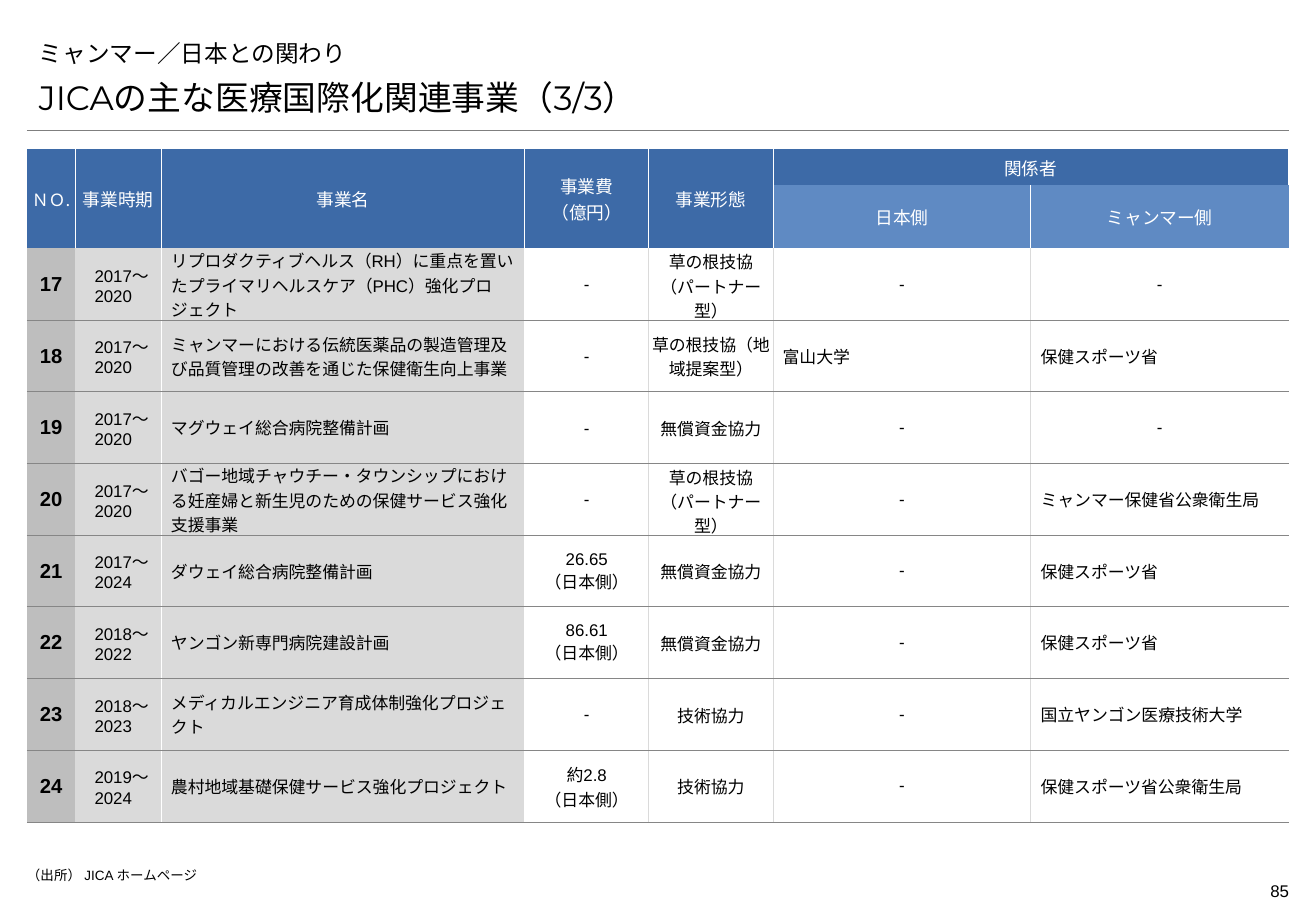
from lxml import etree
from pptx import Presentation
from pptx.dml.color import RGBColor
from pptx.enum.shapes import MSO_CONNECTOR
from pptx.enum.text import MSO_ANCHOR, PP_ALIGN
from pptx.oxml.ns import qn
from pptx.util import Pt

LEFT, CENTER, RIGHT = PP_ALIGN.LEFT, PP_ALIGN.CENTER, PP_ALIGN.RIGHT
TOP, MIDDLE, BOTTOM = MSO_ANCHOR.TOP, MSO_ANCHOR.MIDDLE, MSO_ANCHOR.BOTTOM
STRAIGHT = MSO_CONNECTOR.STRAIGHT

# Content
SUBTITLE = "ミャンマー／日本との関わり"
TITLE = "JICAの主な医療国際化関連事業（3/3）"
SOURCE = "（出所） JICA ホームページ"
PAGE_NUMBER = "85"
HEADERS = ["ＮＯ.", "事業時期", "事業名", "事業費\n（億円）", "事業形態"]
PARTY_HEADER = "関係者"
PARTIES = ["日本側", "ミャンマー側"]
PARTNER = "草の根技協（パートナー型）"
GRANT = "無償資金協力"
TECHNICAL = "技術協力"
MINISTRY = "保健スポーツ省"
PROJECTS = [
    ("17", "2017～2020", "リプロダクティブヘルス（RH）に重点を置いたプライマリヘルスケア（PHC）強化プロジェクト",
     "-", PARTNER, "-", "-"),
    ("18", "2017～2020", "ミャンマーにおける伝統医薬品の製造管理及び品質管理の改善を通じた保健衛生向上事業",
     "-", "草の根技協（地域提案型）", "富山大学", MINISTRY),
    ("19", "2017～2020", "マグウェイ総合病院整備計画", "-", GRANT, "-", "-"),
    ("20", "2017～2020", "バゴー地域チャウチー・タウンシップにおける妊産婦と新生児のための保健サービス強化支援事業",
     "-", PARTNER, "-", "ミャンマー保健省公衆衛生局"),
    ("21", "2017～2024", "ダウェイ総合病院整備計画", "26.65\n（日本側）", GRANT, "-", MINISTRY),
    ("22", "2018～2022", "ヤンゴン新専門病院建設計画", "86.61\n（日本側）", GRANT, "-", MINISTRY),
    ("23", "2018～2023", "メディカルエンジニア育成体制強化プロジェクト",
     "-", TECHNICAL, "-", "国立ヤンゴン医療技術大学"),
    ("24", "2019～2024", "農村地域基礎保健サービス強化プロジェクト",
     "約2.8\n（日本側）", TECHNICAL, "-", "保健スポーツ省公衆衛生局"),
]

# Format
COLORS = {
    "text": "000000", "white": "FFFFFF", "rule": "7F7F7F",
    "header": "3D6AA7", "subheader": "5F8AC3",
    "number": "BEBEBE", "label": "DADADA", "row_line": "868686", "column_line": "DADADA",
}
BODY_FONT, TITLE_FONT, JAPANESE_FONT = "Arial", "Montserrat", "Noto Sans CJK JP"
SLIDE_SIZE = (780, 540)
MARGIN_LEFT = 16
CONTENT_WIDTH = 748
COLUMN_WIDTHS = [28.6, 51, 215.4, 73.6, 73.6, 152.9, 152.9]
HEADER_HEIGHTS = [21.4, 37.4]
ROW_HEIGHT = 42.5
# Per column: fill, alignment, cell insets (left, top, right, bottom)
COLUMN_FORMATS = [
    ("number", CENTER, (5, 2, 5, 2)),
    ("label", LEFT, (11.5, 0, 5.8, 0)),
    ("label", LEFT, (5.8, 0, 5.8, 0)),
    ("white", CENTER, (0.7, 0.7, 0.7, 0)),
    ("white", CENTER, (0.7, 0.7, 0.7, 0)),
    ("white", LEFT, (5.8, 0, 5.8, 0)),
    ("white", LEFT, (5.8, 0, 5.8, 0)),
]
# Lines between neighbouring columns, with none at the outer edges
BODY_DIVIDERS = [None, None, "white", "white"] + ["column_line"] * 3 + [None]
HEADER_DIVIDERS = [None] + ["white"] * 6 + [None]


def write_text(frame, text, size=10, font=BODY_FONT, color="text", bold=False, align=LEFT):
    frame.word_wrap = True
    for index, line in enumerate(text.split("\n")):
        paragraph = frame.add_paragraph() if index else frame.paragraphs[0]
        paragraph.alignment = align
        run = paragraph.add_run()
        run.text = line
        run.font.size = Pt(size)
        run.font.bold = bold
        run.font.name = font
        run.font.color.rgb = RGBColor.from_string(COLORS[color])
        east_asian = etree.SubElement(run.font._element, qn("a:ea"))
        east_asian.set("typeface", JAPANESE_FONT)


def set_insets(target, insets):
    target.margin_left, target.margin_top, target.margin_right, target.margin_bottom = map(Pt, insets)


def add_text(slide, box, text, insets, anchor=TOP, **text_format):
    frame = slide.shapes.add_textbox(*map(Pt, box)).text_frame
    set_insets(frame, insets)
    frame.vertical_anchor = anchor
    write_text(frame, text, **text_format)


def set_borders(cell, left, right, top, bottom):
    properties = cell._tc.get_or_add_tcPr()
    sides = {"a:lnL": left, "a:lnR": right, "a:lnT": top, "a:lnB": bottom}
    for index, (tag, color) in enumerate(sides.items()):
        line = etree.Element(qn(tag), w=str(Pt(0.5)))
        if color:
            fill = etree.SubElement(line, qn("a:solidFill"))
            etree.SubElement(fill, qn("a:srgbClr"), val=COLORS[color])
        else:
            etree.SubElement(line, qn("a:noFill"))
        properties.insert(index, line)


def format_cell(cell, fill, insets, borders):
    cell.fill.solid()
    cell.fill.fore_color.rgb = RGBColor.from_string(COLORS[fill])
    cell.vertical_anchor = MIDDLE
    set_insets(cell, insets)
    set_borders(cell, *borders)


def add_project_table(slide):
    heights = HEADER_HEIGHTS + [ROW_HEIGHT] * len(PROJECTS)
    table = slide.shapes.add_table(
        len(heights), len(COLUMN_WIDTHS), Pt(MARGIN_LEFT), Pt(88.5),
        Pt(CONTENT_WIDTH), Pt(sum(heights))).table
    table.first_row = table.horz_banding = False
    for column, width in zip(table.columns, COLUMN_WIDTHS):
        column.width = Pt(width)
    for row, height in zip(table.rows, heights):
        row.height = Pt(height)

    # Header cells
    header_count, label_count = len(HEADER_HEIGHTS), len(HEADERS)
    for row in range(header_count):
        for column in range(len(COLUMN_WIDTHS)):
            fill = "subheader" if row and column >= label_count else "header"
            left, right = HEADER_DIVIDERS[column:column + 2]
            format_cell(table.cell(row, column), fill, (0, 0, 0, 0), (left, right, None, None))
    header_format = dict(size=10.5, font=JAPANESE_FONT, color="white", align=CENTER)
    for column, text in enumerate(HEADERS):
        cell = table.cell(0, column)
        cell.merge(table.cell(1, column))
        write_text(cell.text_frame, text, **{**header_format, "size": 10.5 if column else 10})
    table.cell(0, label_count).merge(table.cell(0, label_count + 1))
    write_text(table.cell(0, label_count).text_frame, PARTY_HEADER, **header_format)
    for column, text in enumerate(PARTIES, label_count):
        write_text(table.cell(1, column).text_frame, text, **header_format)

    # Project rows
    for row, project in enumerate(PROJECTS, header_count):
        top = "row_line" if row > header_count else None
        for column, text in enumerate(project):
            fill, align, insets = COLUMN_FORMATS[column]
            left, right = BODY_DIVIDERS[column:column + 2]
            cell = table.cell(row, column)
            format_cell(cell, fill, insets, (left, right, top, "row_line"))
            write_text(cell.text_frame, text, size=10 if column else 12, bold=column == 0,
                       align=CENTER if text == "-" else align)


def main():
    presentation = Presentation()
    presentation.slide_width, presentation.slide_height = map(Pt, SLIDE_SIZE)
    slide = presentation.slides.add_slide(presentation.slide_layouts[6])

    # Heading
    add_text(slide, (MARGIN_LEFT, 15.1, CONTENT_WIDTH, 28.1), SUBTITLE, (7.2, 3.6, 7.2, 3.6),
             anchor=BOTTOM, size=14, font=TITLE_FONT)
    add_text(slide, (MARGIN_LEFT, 43.2, CONTENT_WIDTH, 28.1), TITLE, (7.2, 0, 7.2, 1.8),
             anchor=BOTTOM, size=20, font=TITLE_FONT)
    rule = slide.shapes.add_connector(
        STRAIGHT, Pt(MARGIN_LEFT), Pt(77), Pt(MARGIN_LEFT + CONTENT_WIDTH), Pt(77))
    rule.line.width = Pt(0.25)
    rule.line.color.rgb = RGBColor.from_string(COLORS["rule"])
    etree.SubElement(rule._element.spPr, qn("a:effectLst"))

    add_project_table(slide)

    # Footer
    add_text(slide, (MARGIN_LEFT, 514, 680, 11.5), SOURCE, (0, 0, 0, 0), size=8)
    add_text(slide, (707, 518.4, 57, 19.4), PAGE_NUMBER, (0, 3.6, 0, 3.6), align=RIGHT)

    presentation.save("out.pptx")


if __name__ == "__main__":
    main()
